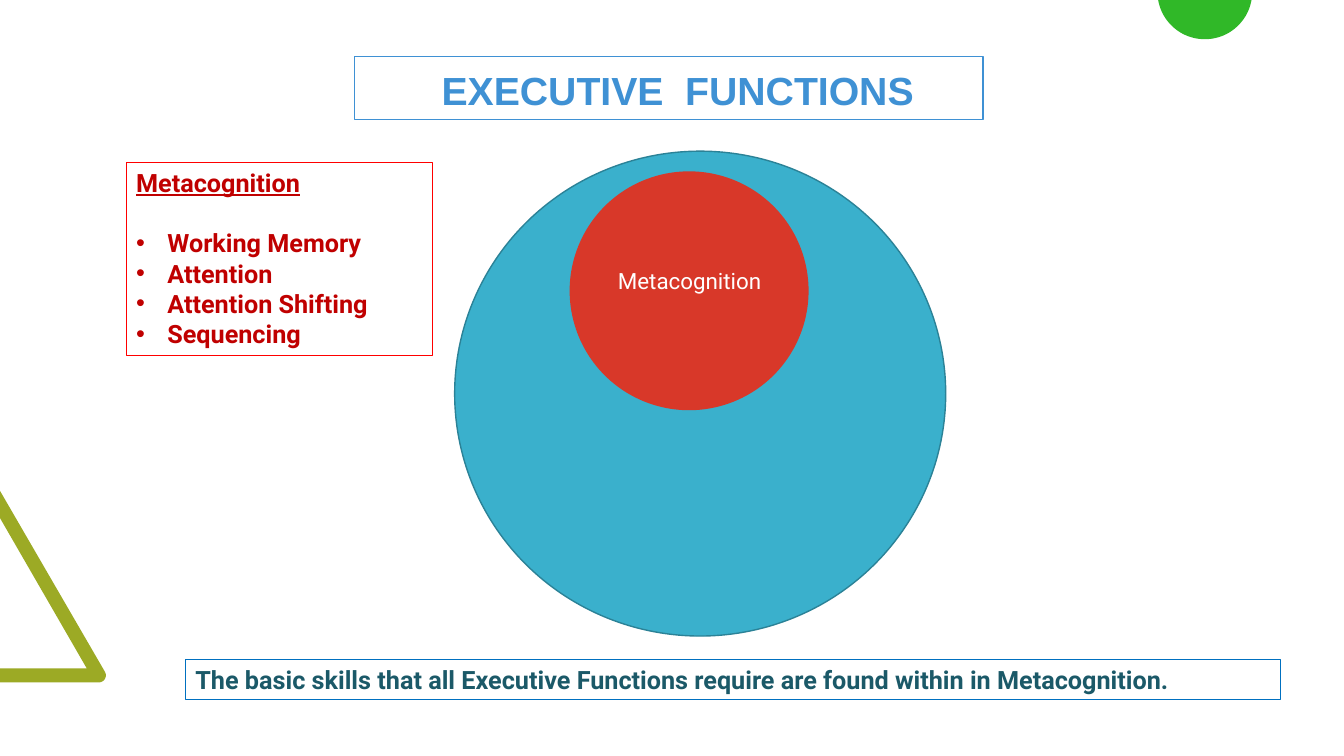
"""Build the Executive Functions slide with its metacognition circles."""
import math
from dataclasses import dataclass

from lxml import etree
from pptx import Presentation
from pptx import util as u
from pptx.dml.color import RGBColor
from pptx.enum import shapes, text
from pptx.oxml import ns


@dataclass(frozen=True)
class Theme:
    blue: str = "3F91D4"
    teal: str = "3AB0CC"
    teal_edge: str = "2B8297"
    teal_dark: str = "1B5968"
    red: str = "D83829"
    red_edge: str = "FF0000"
    red_dark: str = "C00000"
    note_edge: str = "0070C0"
    olive: str = "9CAA25"
    green: str = "30B828"
    white: str = "FFFFFF"
    title_font: str = "Arial"
    body_font: str = "Roboto"
    title_size: int = 28
    body_size: int = 18
    label_size: int = 16


class Deck:
    def __init__(self, theme):
        self.theme = theme
        self.prs = Presentation()
        self.prs.slide_width = u.Inches(13.33)
        self.prs.slide_height = u.Inches(7.5)
        self.s = self.prs.slides.add_slide(self.prs.slide_layouts[1])

    def paint(self, sp, fill=None, line=None, width=0.75):
        if fill:
            sp.fill.solid()
            sp.fill.fore_color.rgb = RGBColor.from_string(fill)
        else:
            sp.fill.background()
        if line:
            sp.line.color.rgb = RGBColor.from_string(line)
            sp.line.width = u.Pt(width)
        else:
            sp.line.fill.background()

    def place(self, sp, box):
        sp.left, sp.top, sp.width, sp.height = map(u.Inches, box)

    def set_text(self, sp, words, size, color, font=None, bold=True,
                 align=text.PP_ALIGN.LEFT, anchor=text.MSO_ANCHOR.TOP):
        tf = sp.text_frame
        tf.text = words
        tf.word_wrap = True
        tf.auto_size = text.MSO_AUTO_SIZE.NONE
        tf.vertical_anchor = anchor
        for p in tf.paragraphs:
            p.alignment = align
            p.space_before = u.Pt(0)
            for r in p.runs:
                r.font.name = font or self.theme.body_font
                r.font.size = u.Pt(size)
                r.font.bold = bold
                r.font.color.rgb = RGBColor.from_string(color)
        return tf

    def title(self, words, box):
        t = self.theme
        sp = self.s.shapes.title
        self.place(sp, box)
        self.paint(sp, line=t.blue)
        tf = self.set_text(sp, words, t.title_size, t.blue, t.title_font)
        tf.margin_left = u.Inches(0.86)
        tf.margin_top = tf.margin_bottom = u.Inches(0.1)

    def bullet_list(self, heading, items, box):
        t = self.theme
        sp = self.s.placeholders[1]
        self.place(sp, box)
        self.paint(sp, line=t.red_edge)
        tf = self.set_text(sp, "\n".join([heading, *items]), t.body_size, t.red_dark)
        head, *bullets = tf.paragraphs
        head.space_after = u.Pt(21.5)
        head.runs[0].font.underline = True
        self.bullet(head, 0, None)
        for p in bullets:
            self.bullet(p, u.Inches(0.31), "•")

    def bullet(self, p, indent, char):
        pPr = p._p.get_or_add_pPr()
        pPr.set("marL", str(indent))
        pPr.set("indent", str(-indent))
        if char:
            etree.SubElement(pPr, ns.qn("a:buFont")).set("typeface", "Arial")
            etree.SubElement(pPr, ns.qn("a:buChar")).set("char", char)
        else:
            etree.SubElement(pPr, ns.qn("a:buNone"))

    def circle(self, box, fill, line=None):
        sp = self.s.shapes.add_shape(shapes.MSO_SHAPE.OVAL, *map(u.Inches, box))
        sp.shadow.inherit = False
        self.paint(sp, fill, line, 1)

    def outline(self, points, fill):
        start, *rest = [(u.Inches(x), u.Inches(y)) for x, y in points]
        fb = self.s.shapes.build_freeform(*start)
        fb.add_line_segments(rest, close=True)
        sp = fb.convert_to_shape()
        sp.shadow.inherit = False
        self.paint(sp, fill)

    def textbox(self, words, box, size, color, line=None, **style):
        sp = self.s.shapes.add_textbox(*map(u.Inches, box))
        self.paint(sp, line=line)
        self.set_text(sp, words, size, color, **style)


def arc(cx, cy, radius, start, end, steps):
    angles = (math.radians(start + (end - start) * i / steps) for i in range(steps + 1))
    return [(cx + radius * math.cos(a), cy + radius * math.sin(a)) for a in angles]


def main():
    t = Theme()
    deck = Deck(t)
    corner = arc(0.98, 6.7, 0.07, -30, 90, 12)
    deck.outline([(0, 6.77), (0, 6.63), (0.86, 6.63), (0, 5.14), (0, 4.87), *corner], t.olive)
    deck.outline(arc(11.95, -0.08, 0.47, 10, 170, 48), t.green)
    deck.circle((4.51, 1.5, 4.87, 4.81), t.teal, t.teal_edge)
    deck.circle((5.65, 1.7, 2.37, 2.37), t.red)
    deck.textbox("Metacognition", (6.02, 2.4, 1.64, 0.77), t.label_size, t.white,
                 bold=False, align=text.PP_ALIGN.CENTER, anchor=text.MSO_ANCHOR.MIDDLE)
    deck.title("EXECUTIVE  FUNCTIONS", (3.52, 0.56, 6.23, 0.63))
    deck.bullet_list("Metacognition",
                     ["Working Memory", "Attention", "Attention Shifting", "Sequencing"],
                     (1.25, 1.61, 3.04, 1.92))
    deck.textbox("The basic skills that all Executive Functions require are found "
                 "within in Metacognition.",
                 (1.84, 6.54, 10.86, 0.4), t.body_size, t.teal_dark, t.note_edge)
    deck.prs.save("out.pptx")


if __name__ == "__main__":
    main()
